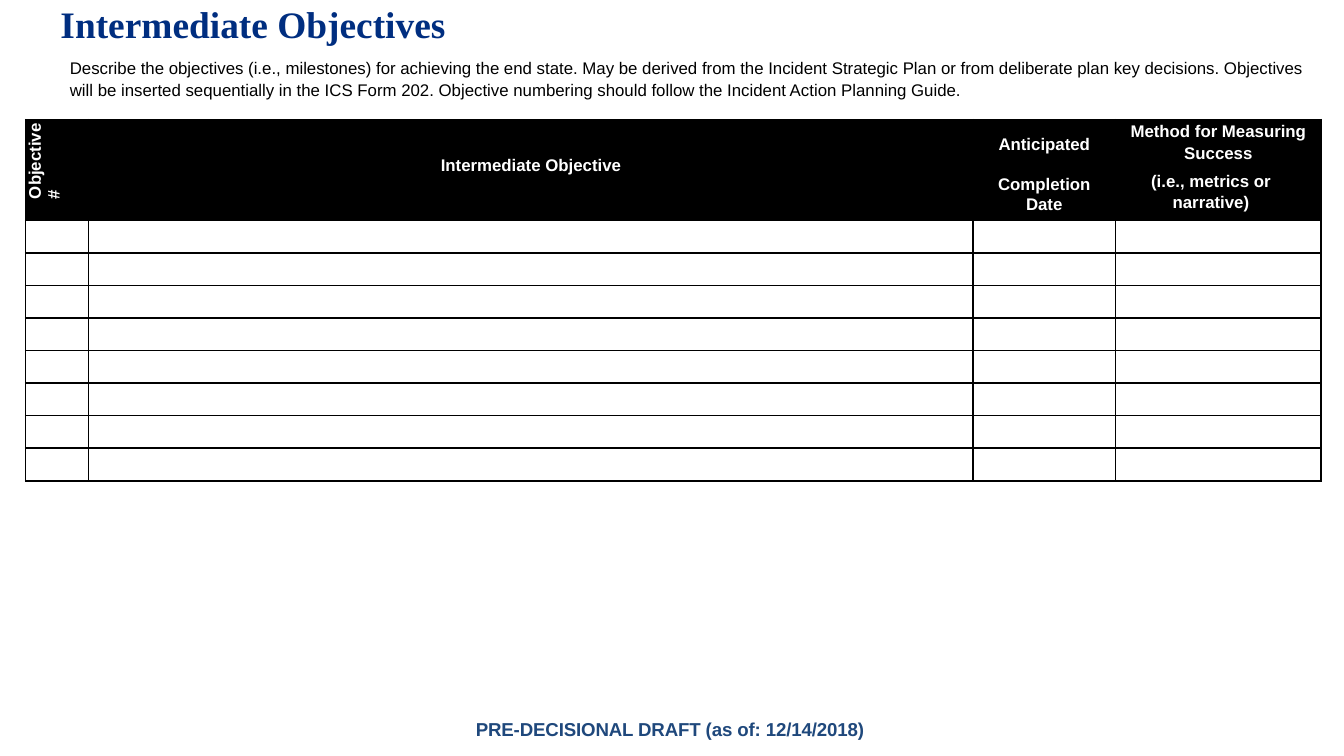
from lxml import etree
from pptx import Presentation
from pptx.dml import color
from pptx.enum import text
from pptx.oxml import ns
from pptx.util import Inches, Pt

NAVY = color.RGBColor(0x00, 0x2E, 0x80)
BLUE = color.RGBColor(0x1F, 0x48, 0x7C)
BLACK = color.RGBColor(0, 0, 0)
WHITE = color.RGBColor(255, 255, 255)

COLUMN_WIDTHS = (0.47, 6.58, 1.06, 1.53)
HEADER_HEIGHT = 0.75
BODY_ROWS = 8
BODY_HEIGHT = 1.94

DESCRIPTION = (
    "Describe the objectives (i.e., milestones) for achieving the end state. "
    "May be derived from the Incident Strategic Plan or from deliberate plan key "
    "decisions. Objectives will be inserted sequentially in the ICS Form 202. "
    "Objective numbering should follow the Incident Action Planning Guide."
)


def add_span(para, words, size, ink, bold=False, font="Arial", tracking=0):
    span = para.add_run()
    span.text = words
    span.font.name = font
    span.font.size = Pt(size)
    span.font.bold = bold
    span.font.color.rgb = ink
    if tracking:
        span.font._element.set("spc", str(tracking))


def prepare_frame(frame, top=0):
    frame.auto_size = text.MSO_AUTO_SIZE.NONE
    frame.word_wrap = True
    frame.vertical_anchor = text.MSO_ANCHOR.TOP
    frame.margin_left = frame.margin_right = frame.margin_bottom = 0
    frame.margin_top = Inches(top)


def set_indent(para, left=0, right=0):
    properties = para._p.get_or_add_pPr()
    properties.set("marL", str(Inches(left)))
    properties.set("marR", str(Inches(right)))
    properties.set("indent", "0")


def add_title(page):
    title = page.shapes.title
    title.left, title.top = Inches(0.43), Inches(0)
    title.width, title.height = Inches(2.95), Inches(0.36)
    prepare_frame(title.text_frame, 0.01)
    para = title.text_frame.paragraphs[0]
    para.alignment = text.PP_ALIGN.LEFT
    set_indent(para, 0.02)
    add_span(para, "Intermediate Objectives", 20, NAVY, True, "Times New Roman")


def add_text(page, left, top, width, height):
    box = page.shapes.add_textbox(
        Inches(left), Inches(top), Inches(width), Inches(height))
    prepare_frame(box.text_frame)
    para = box.text_frame.paragraphs[0]
    set_indent(para, 0.02)
    return para


def set_borders(cell):
    properties = cell._tc.get_or_add_tcPr()
    for position, side in enumerate(("lnL", "lnR", "lnT", "lnB")):
        line = etree.Element(ns.qn(f"a:{side}"), w=str(Pt(1)))
        fill = etree.SubElement(line, ns.qn("a:solidFill"))
        etree.SubElement(fill, ns.qn("a:srgbClr"), val=str(BLACK))
        properties.insert(position, line)


def format_cell(cell, top=0):
    cell.margin_left = cell.margin_right = cell.margin_bottom = 0
    cell.margin_top = Inches(top)
    set_borders(cell)


def fill_header(cell, lines, top=0):
    format_cell(cell, top)
    cell.fill.solid()
    cell.fill.fore_color.rgb = BLACK
    frame = cell.text_frame
    for number, (words, before, spacing, left, right) in enumerate(lines):
        para = frame.add_paragraph() if number else frame.paragraphs[0]
        para.alignment = text.PP_ALIGN.CENTER
        set_indent(para, left, right)
        if before:
            para.space_before = Pt(before)
        if spacing:
            para.line_spacing = spacing
        add_span(para, words, 9, WHITE, True)


def add_objectives_table(page):
    table = page.shapes.add_table(
        BODY_ROWS + 1, len(COLUMN_WIDTHS), Inches(0.19), Inches(0.89),
        Inches(sum(COLUMN_WIDTHS)), Inches(HEADER_HEIGHT + BODY_HEIGHT)).table
    table.first_row = table.horz_banding = False
    for column, width in zip(table.columns, COLUMN_WIDTHS):
        column.width = Inches(width)
    header, *body = table.rows
    header.height = Inches(HEADER_HEIGHT)
    number, objective, date, method = header.cells

    fill_header(number, [("Objective #", 0, None, 0.02, 0)])
    number.text_frame.paragraphs[0].alignment = text.PP_ALIGN.LEFT
    number.margin_left = Inches(0.14)
    number._tc.tcPr.set("vert", "vert270")
    fill_header(objective, [("Intermediate Objective", 0, None, 0, 0)], 0.27)
    fill_header(date, [("Anticipated", 0, 1.07, 0, 0),
                       ("Completion Date", 10.3, 1.07, 0.12, 0.12)], 0.11)
    fill_header(method, [("Method for Measuring Success", 0, Pt(11.6), 0, 0),
                         ("(i.e., metrics or", 5.2, None, 0, 0.11),
                         ("narrative)", 0.8, None, 0, 0.11)])

    for row in body:
        row.height = Inches(BODY_HEIGHT / BODY_ROWS)
        for cell in row.cells:
            format_cell(cell)
            cell.fill.background()
            etree.SubElement(cell.text_frame.paragraphs[0]._p,
                             ns.qn("a:endParaRPr"), sz="900")


def main():
    deck = Presentation()
    deck.slide_width = Inches(10)
    deck.slide_height = Inches(10 * 9 / 16)
    page = deck.slides.add_slide(deck.slide_layouts[5])
    add_title(page)
    footer = add_text(page, 3.52, 5.34, 3.05, 0.18)
    add_span(footer, "PRE-DECISIONAL DRAFT (as of: 12/14/2018)", 10, BLUE, True,
             tracking=-5)
    description = add_text(page, 0.5, 0.42, 9.3, 0.35)
    description.line_spacing = 1.08
    add_span(description, DESCRIPTION, 9, BLACK)
    add_objectives_table(page)
    deck.save("out.pptx")


if __name__ == "__main__":
    main()
